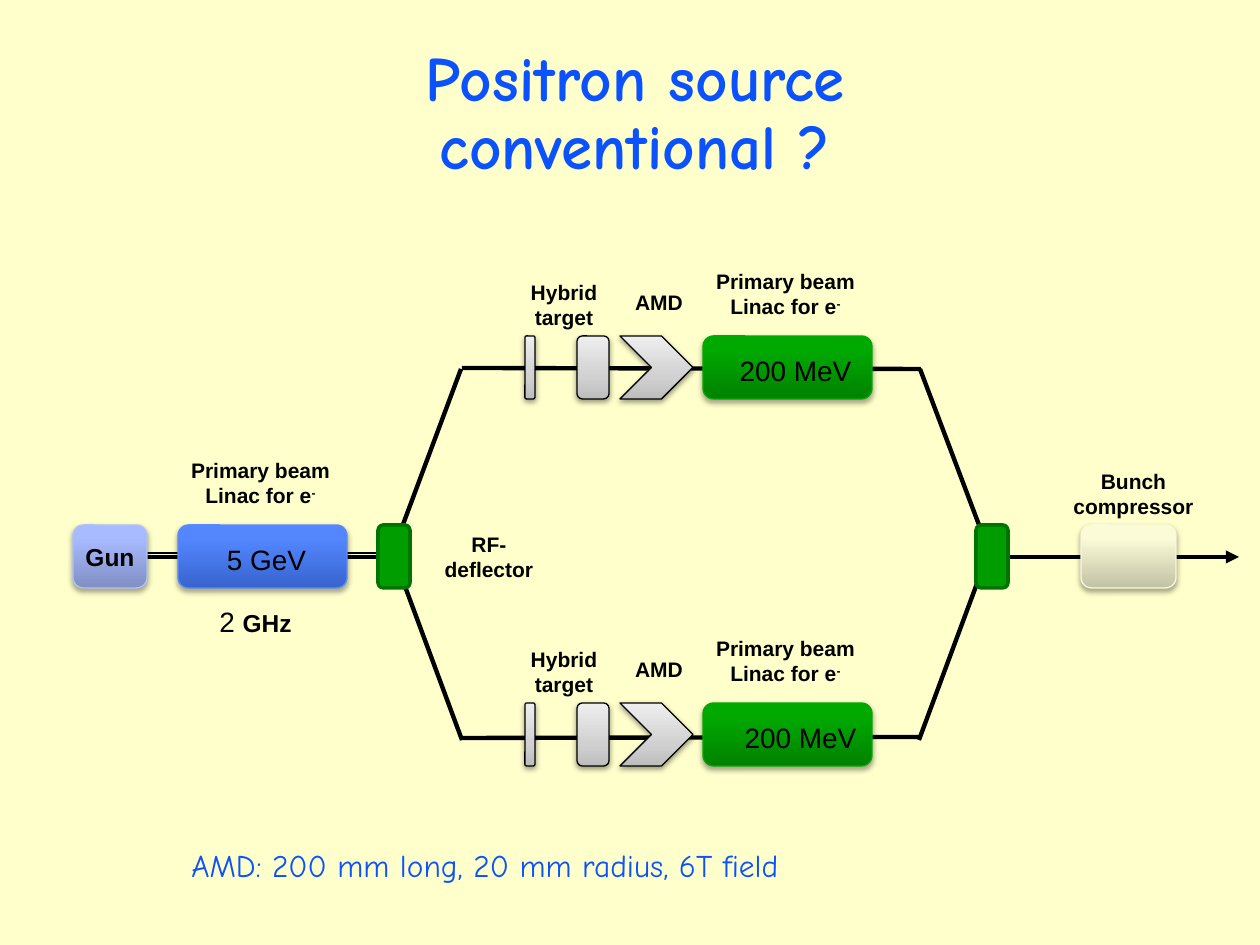
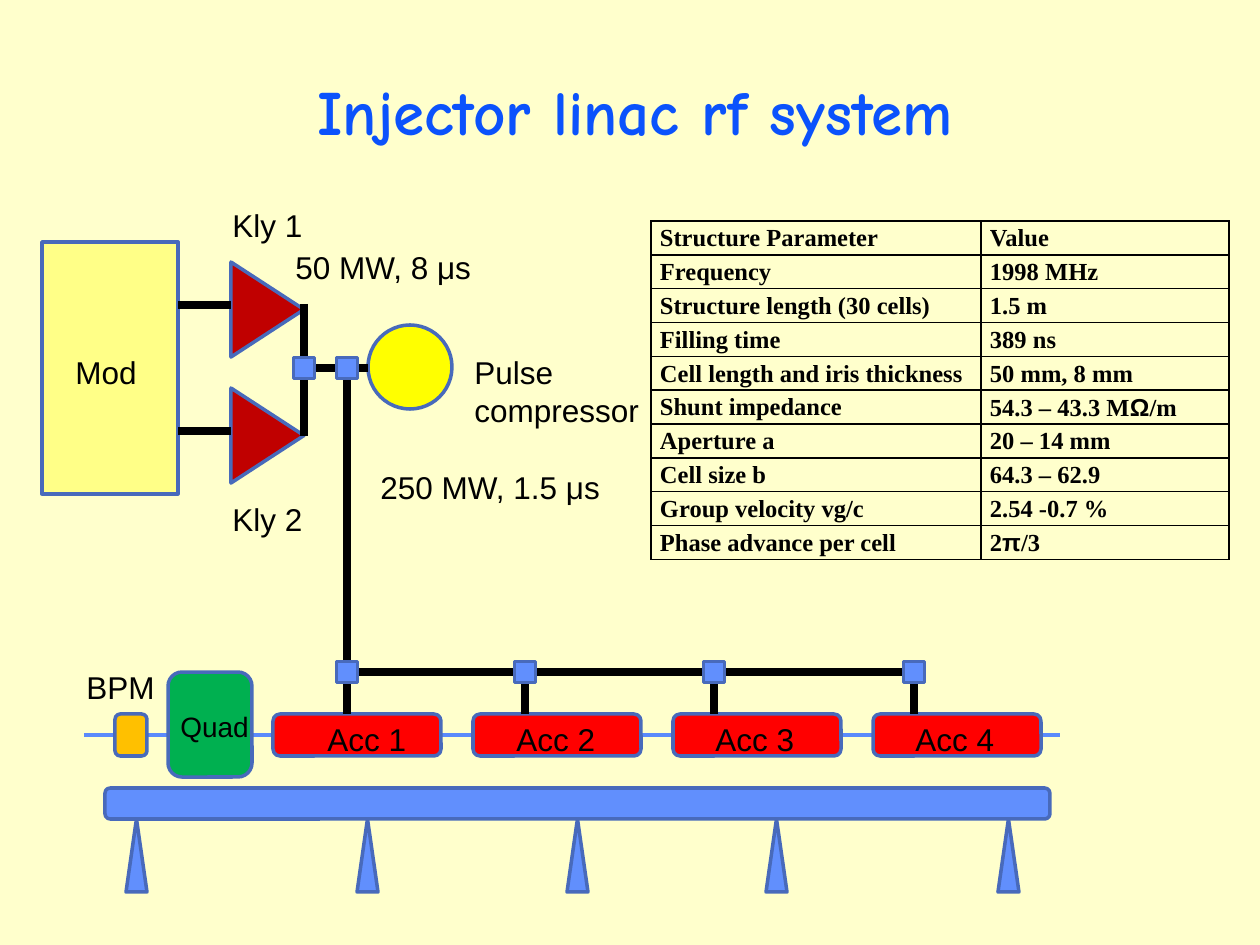
from collections import namedtuple
from itertools import groupby

from lxml.etree import SubElement
from pptx import Presentation
from pptx.dml.color import RGBColor
from pptx.enum.shapes import MSO_CONNECTOR, MSO_SHAPE as SHAPE
from pptx.enum.text import MSO_ANCHOR as ANCHOR, PP_ALIGN as ALIGN
from pptx.oxml.ns import qn
from pptx.util import Pt

# ---- Shared look -------------------------------------------------------
EMU_PER_PX = 914400 / 126
PAPER, INK, TITLE_BLUE = "FFFFCC", "000000", "0B52FC"
BLUE, BLUE_EDGE, BEAM_BLUE = "618FFD", "486ABB", "5B8AFB"
GREEN, GREEN_EDGE, RED = "009D00", "007400", "FF0000"
BODY_FONT, TITLE_FONT, TABLE_FONT = "Arial", "Comic Neue", "Times New Roman"
TITLE_AT = (199, 63, 872, 105)

Span = namedtuple("Span", "text size bold raised", defaults=(12, True, False))
Glossy = namedtuple("Glossy", "stops edge opacity distance")

GUN_BLUE = Glossy([(0, "818FC5"), (80, "A8BBFF"), (100, "AABCFF")], "B1C1FA", 35, 1.8)
LINAC_BLUE = Glossy([(0, "3764CE"), (80, "5487FF"), (100, "5688FF")], "5B8AFB", 35, 1.8)
LINAC_GREEN = Glossy([(0, "008200"), (80, "00A900"), (100, "00A900")], "00AA00", 35, 1.8)
CREAM = Glossy([(0, "C2C2A5"), (80, "FBFBD7"), (100, "FDFDD7")], "FAFADC", 35, 1.8)
SILVER = Glossy([(0, "BDBDBD"), (35, "D1D1D1"), (100, "EEEEEE")], INK, 38, 1.6)

# ---- Positron source ---------------------------------------------------
POSITRON_TITLE = "Positron source\nconventional ?"
AMD_NOTE = "AMD: 200 mm long, 20 mm radius, 6T field"
LINAC_LABEL = [[Span("Primary beam")], [Span("Linac for e"), Span("-", raised=True)]]

BEAM_PATHS = [  # x1, y1, x2, y2, width
    (461, 369, 392, 554, 2.5), (136, 553, 391, 553, 1.5),
    (393, 554, 462, 740, 2.5), (988, 554, 919, 740, 2.5),
    (920, 369, 990, 554, 2.5), (921, 369, 462, 368, 2.5),
    (920, 737, 460, 738, 2.5), (147, 557, 399, 557, 2.5),
]
BEAM_EXIT = (987, 557, 1239, 557)

MAIN_ROW = [  # left, width, look; all share one top and height
    (73, 74, GUN_BLUE), (178, 169, LINAC_BLUE), (1081, 95, CREAM),
]
DEFLECTORS = [378, 976]
ROW_TOP, ROW_HEIGHT = 525, 63
MAIN_LABELS = [
    ((158, 451, 205, 63), LINAC_LABEL),
    ((171, 598, 169, 47), [[Span("2 ", 16, False), Span("GHz", 14)]]),
    ((182, 536, 169, 47), [[Span("5 GeV", 16, False)]]),
    ((431, 525, 116, 63), [[Span("RF-deflector")]]),
    ((1060, 462, 147, 63), [[Span("Bunch compressor")]]),
]

BRANCH_TOPS = [336, 703]
BRANCH_PARTS = [  # left, width, outline, look
    (525, 10, SHAPE.ROUNDED_RECTANGLE, SILVER),
    (577, 32, SHAPE.ROUNDED_RECTANGLE, SILVER),
    (620, 73, SHAPE.CHEVRON, SILVER),
    (703, 169, SHAPE.ROUNDED_RECTANGLE, LINAC_GREEN),
]
BRANCH_LABELS = [  # left, offset from branch top, width, height, text
    (514, -63, 100, 63, [[Span("Hybrid target")]]),
    (609, -53, 100, 38, [[Span("AMD")]]),
    (683, -74, 205, 63, LINAC_LABEL),
]
ENERGY_LEFTS = [706, 711]

# ---- Injector linac ----------------------------------------------------
INJECTOR_TITLE = "Injector linac rf system"
PARAMETERS = [
    ("Structure Parameter", "Value"),
    ("Frequency", "1998 MHz"),
    ("Structure length (30 cells)", "1.5 m"),
    ("Filling time", "389 ns"),
    ("Cell length and iris thickness", "50 mm, 8 mm"),
    ("Shunt impedance", "54.3 – 43.3 MΩ/m"),
    ("Aperture a", "20 – 14 mm"),
    ("Cell size b", "64.3 – 62.9"),
    ("Group velocity vg/c", "2.54 -0.7 %"),
    ("Phase advance per cell", "2π/3"),
]
TABLE_AT, TABLE_COLUMNS = (651, 221, 578, 337), (330, 248)

LEG_LEFTS = [126, 357, 567, 766, 998]
ACC_LABEL_LEFTS = [315, 504, 703, 903]
ACC_LEFT, ACC_PITCH = 273, 200
KLYSTRON_TOPS = [273, 399]
MACHINE_PARTS = [  # outline, place, fill
    (SHAPE.ROUNDED_RECTANGLE, (105, 788, 945, 31), BLUE),
    (SHAPE.ROUNDED_RECTANGLE, (168, 672, 84, 105), "00B050"),
    (SHAPE.ROUNDED_RECTANGLE, (115, 714, 32, 42), "FFC000"),
    (SHAPE.RECTANGLE, (42, 242, 136, 252), "FFFF87"),
    (SHAPE.OVAL, (368, 325, 84, 84), "FFFF00"),
]
FEED_Y, ACC_TOP = 672, 714
FEED_XS = [347, 525, 714, 914]
WAVEGUIDES = [
    (347, 368, 347, FEED_Y), (914, FEED_Y, 347, FEED_Y),
    (304, 304, 304, 436), (304, 368, 368, 368),
    (231, 431, 178, 431), (231, 305, 178, 305),
] + [(x, FEED_Y, x, ACC_TOP) for x in FEED_XS]
SPLITTERS = [(304, 368), (347, 368)] + [(x, FEED_Y) for x in FEED_XS]
SPLITTER_SIZE = 21
MACHINE_LABELS = [  # place, text, size
    ((168, 703, 96, 47), "Quad", 16),
    ((74, 662, 96, 50), "BPM", 18),
    ((63, 347, 95, 50), "Mod", 18),
    ((462, 347, 252, 88), "Pulse compressor", 18),
    ((220, 200, 116, 50), "Kly 1", 18),
    ((220, 494, 116, 50), "Kly 2", 18),
    ((283, 242, 242, 50), "50 MW, 8 μs", 18),
    ((368, 462, 273, 50), "250 MW, 1.5 μs", 18),
] + [((x, ACC_TOP, 116, 50), f"Acc {i}", 18) for i, x in enumerate(ACC_LABEL_LEFTS, 1)]


# ---- Drawing helpers ---------------------------------------------------
def emu(px):
    return round(px * EMU_PER_PX)


def place(at):
    return [emu(px) for px in at]


def rgb(code):
    return RGBColor.from_string(code)


def add_node(parent, tag, **attributes):
    return SubElement(parent, qn(tag), {k: str(v) for k, v in attributes.items()})


def style_run(run, size, bold, font, color=INK):
    run.font.size, run.font.bold, run.font.name = Pt(size), bold, font
    run.font.color.rgb = rgb(color)


def add_text(page, at, paragraphs, align=ALIGN.CENTER, font=BODY_FONT, color=INK):
    """Add a text box; each paragraph is a list of spans."""
    box = page.shapes.add_textbox(*place(at))
    frame = box.text_frame
    frame.word_wrap = True
    for index, spans in enumerate(paragraphs):
        para = frame.paragraphs[0] if index == 0 else frame.add_paragraph()
        para.alignment = align
        for span in spans:
            for row, text in enumerate(span.text.split("\n")):
                if row:
                    para.add_line_break()
                run = para.add_run()
                run.text = text
                style_run(run, span.size, span.bold, font, color)
                if span.raised:
                    run.font._element.set("baseline", "30000")
    return frame


def add_part(page, outline, at, fill, edge=BLUE_EDGE, width=2):
    part = page.shapes.add_shape(outline, *place(at))
    part.shadow.inherit = False
    part.fill.solid()
    part.fill.fore_color.rgb = rgb(fill)
    part.line.color.rgb = rgb(edge)
    part.line.width = Pt(width)
    return part


def add_glossy_part(page, outline, at, look):
    """Add a shape with a vertical gradient and a soft shadow below it."""
    part = add_part(page, outline, at, INK, look.edge, 0.75)
    part.fill.gradient()
    part.fill.gradient_angle = 90
    properties = part.element.spPr
    stops = properties.find(".//" + qn("a:gsLst"))
    stops.clear()
    for position, color in look.stops:
        stop = add_node(stops, "a:gs", pos=position * 1000)
        add_node(stop, "a:srgbClr", val=color)
    shadow = add_node(properties.find(qn("a:effectLst")), "a:outerShdw",
                      blurRad=Pt(3.1), dist=Pt(look.distance), dir=5400000,
                      algn="ctr", rotWithShape=0)
    tint = add_node(shadow, "a:srgbClr", val=INK)
    add_node(tint, "a:alpha", val=look.opacity * 1000)


def add_line(page, ends, width, color=INK, arrow=False):
    line = page.shapes.add_connector(MSO_CONNECTOR.STRAIGHT, *place(ends))
    line.line.color.rgb = rgb(color)
    line.line.width = Pt(width)
    if arrow:
        add_node(line.line._get_or_add_ln(), "a:tailEnd", type="triangle")
    add_node(line.element.spPr, "a:effectLst")


def add_page(deck, title):
    page = deck.slides.add_slide(deck.slide_layouts[6])
    frame = add_text(page, TITLE_AT, [[Span(title, 36)]], font=TITLE_FONT, color=TITLE_BLUE)
    frame.vertical_anchor = ANCHOR.MIDDLE
    frame.paragraphs[0].line_spacing = 0.9
    return page


def fill_cell(cell, text):
    cell.margin_left = cell.margin_right = emu(9)
    cell.margin_top = cell.margin_bottom = 0
    para = cell.text_frame.paragraphs[0]
    para.alignment = ALIGN.JUSTIFY
    para.line_spacing, para.space_after = 1.15, Pt(10)
    for greek, letters in groupby(text, lambda letter: letter in "Ωπ"):
        run = para.add_run()
        run.text = "".join(letters)
        style_run(run, 14, True, BODY_FONT if greek else TABLE_FONT)
    properties = cell._tc.get_or_add_tcPr()
    for side in ("a:lnL", "a:lnR", "a:lnT", "a:lnB"):
        border = add_node(properties, side, w=Pt(1))
        add_node(add_node(border, "a:solidFill"), "a:srgbClr", val=INK)
    cell.fill.background()


def add_parameter_table(page):
    table = page.shapes.add_table(len(PARAMETERS), len(TABLE_COLUMNS), *place(TABLE_AT)).table
    table.first_row = table.horz_banding = False
    for column, width in zip(table.columns, TABLE_COLUMNS):
        column.width = emu(width)
    for row, texts in zip(table.rows, PARAMETERS):
        row.height = emu(TABLE_AT[3] / len(PARAMETERS))
        for cell, text in zip(row.cells, texts):
            fill_cell(cell, text)


# ---- Slides ------------------------------------------------------------
def build_positron_source(deck):
    page = add_page(deck, POSITRON_TITLE)
    for *ends, width in BEAM_PATHS:
        add_line(page, ends, width)
    add_line(page, BEAM_EXIT, 2.5, arrow=True)

    for left, width, look in MAIN_ROW:
        add_glossy_part(page, SHAPE.ROUNDED_RECTANGLE, (left, ROW_TOP, width, ROW_HEIGHT), look)
    for left in DEFLECTORS:
        add_part(page, SHAPE.ROUNDED_RECTANGLE, (left, ROW_TOP, 32, ROW_HEIGHT), GREEN, GREEN_EDGE)
    add_text(page, (73, 536, 84, 43), [[Span("Gun", 14)]], ALIGN.LEFT)
    for at, paragraphs in MAIN_LABELS:
        add_text(page, at, paragraphs)

    for top, energy_left in zip(BRANCH_TOPS, ENERGY_LEFTS):
        for left, width, outline, look in BRANCH_PARTS:
            add_glossy_part(page, outline, (left, top, width, ROW_HEIGHT), look)
        for left, offset, width, height, paragraphs in BRANCH_LABELS:
            add_text(page, (left, top + offset, width, height), paragraphs)
        add_text(page, (energy_left, top + 11, 179, 47), [[Span("200 MeV", 16, False)]])
    add_text(page, (179, 840, 756, 50), [[Span(AMD_NOTE, 18, False)]],
             ALIGN.LEFT, TITLE_FONT, TITLE_BLUE)


def build_injector_linac(deck):
    page = add_page(deck, INJECTOR_TITLE)
    add_parameter_table(page)
    add_line(page, (84, 735, 1060, 735), 2.75, BEAM_BLUE)

    for outline, at, fill in MACHINE_PARTS:
        add_part(page, outline, at, fill)
    for left in LEG_LEFTS:
        add_part(page, SHAPE.ISOSCELES_TRIANGLE, (left, 819, 21, 73), BLUE)
    for index in range(len(ACC_LABEL_LEFTS)):
        left = ACC_LEFT + index * ACC_PITCH
        add_part(page, SHAPE.ROUNDED_RECTANGLE, (left, ACC_TOP, 168, 42), RED)
    for top in KLYSTRON_TOPS:
        klystron = add_part(page, SHAPE.ISOSCELES_TRIANGLE, (220, top, 95, 73), "C00000")
        klystron.rotation = 90

    for ends in WAVEGUIDES:
        add_line(page, ends, 5)
    for x, y in SPLITTERS:
        corner = (x - SPLITTER_SIZE / 2, y - SPLITTER_SIZE / 2)
        add_part(page, SHAPE.RECTANGLE, (*corner, SPLITTER_SIZE, SPLITTER_SIZE), BLUE)
    for at, text, size in MACHINE_LABELS:
        add_text(page, at, [[Span(text, size, False)]], ALIGN.LEFT)


def main():
    deck = Presentation()
    deck.slide_width, deck.slide_height = emu(1260), emu(945)
    background = deck.slide_master.background.fill
    background.solid()
    background.fore_color.rgb = rgb(PAPER)
    build_positron_source(deck)
    build_injector_linac(deck)
    deck.save("out.pptx")


if __name__ == "__main__":
    main()
